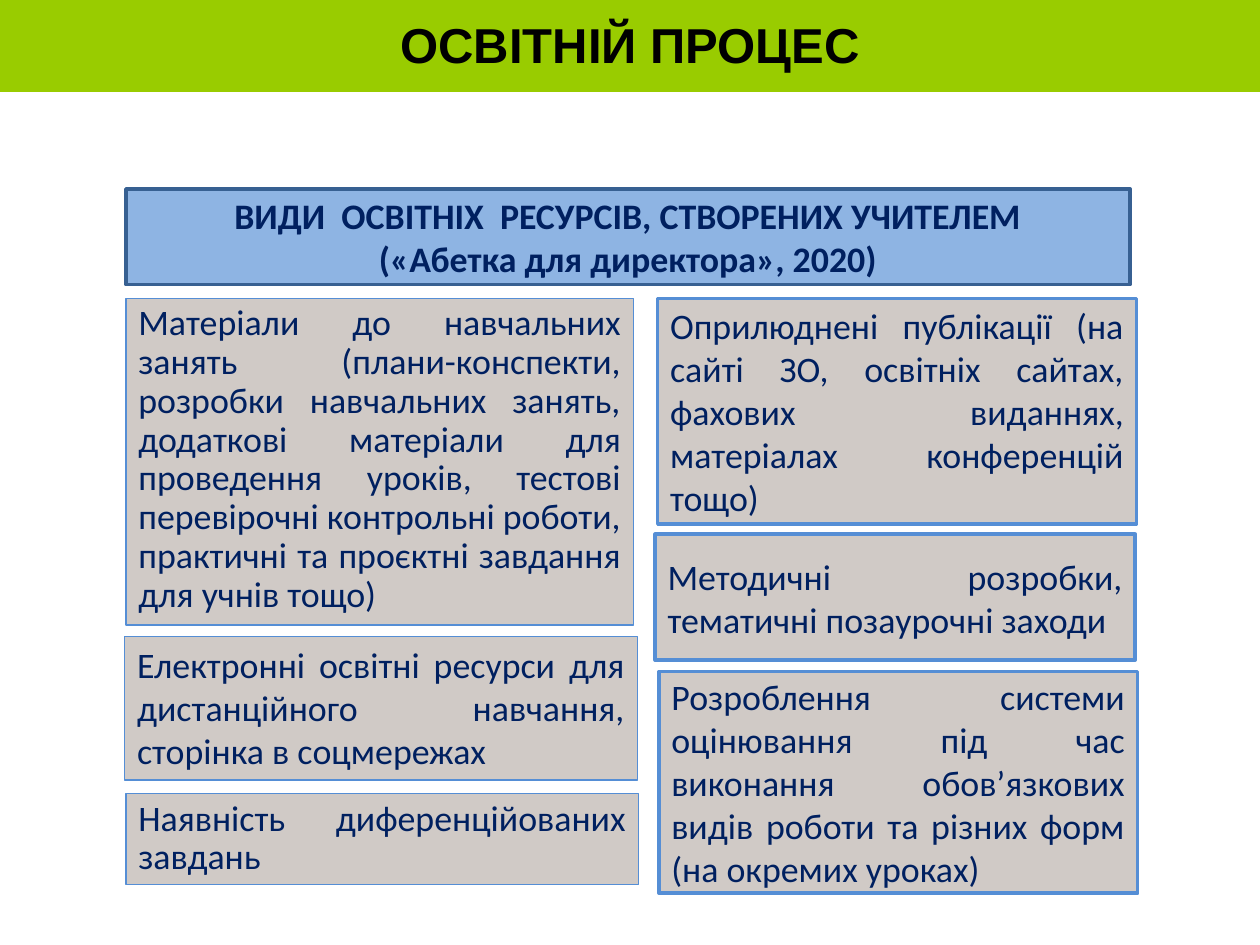
from pptx import Presentation
from pptx.dml.color import RGBColor
from pptx.enum.shapes import MSO_SHAPE
from pptx.enum.text import MSO_ANCHOR, PP_ALIGN
from pptx.util import Inches, Pt

RECTANGLE = MSO_SHAPE.RECTANGLE
TOP, MIDDLE = MSO_ANCHOR.TOP, MSO_ANCHOR.MIDDLE
CENTER, JUSTIFY = PP_ALIGN.CENTER, PP_ALIGN.JUSTIFY

BLACK = RGBColor(0x00, 0x00, 0x00)
NAVY = RGBColor(0x00, 0x20, 0x60)
LIME = RGBColor(0x99, 0xCC, 0x00)
SKY = RGBColor(0x8E, 0xB4, 0xE3)
STEEL = RGBColor(0x37, 0x60, 0x92)
BLUE = RGBColor(0x55, 0x8E, 0xD5)
STONE = RGBColor(0xD0, 0xCA, 0xC6)

COLUMNS, ROWS = 100, 75

TITLE_FONT = {"name": "Arial", "size": Pt(28), "bold": True}
BODY_FONT = {"name": "Calibri", "size": Pt(20.5), "bold": False}
HEADING_FONT = {**BODY_FONT, "bold": True}
PLAIN = {"alignment": JUSTIFY}
TIGHT = {"alignment": JUSTIFY, "line_spacing": 0.9, "space_before": Pt(8.6)}
CENTERED = {"alignment": CENTER}

# Each entry: (column, row, columns wide, rows high), paragraph format, text
LEFT_BOXES = [
    ((10, 23.7, 40.3, 25.9), TIGHT,
     "Матеріали до навчальних занять (плани-конспекти, розробки навчальних "
     "занять, додаткові матеріали для проведення уроків, тестові перевірочні "
     "контрольні роботи, практичні та проєктні завдання для учнів тощо)"),
    ((9.9, 50.5, 40.7, 11.4), PLAIN,
     "Електронні освітні ресурси для дистанційного навчання, "
     "сторінка в соцмережах"),
    ((10, 63, 40.7, 7.2), TIGHT, "Наявність диференційованих завдань"),
]
RIGHT_BOXES = [
    ((52.2, 23.7, 38, 17.9), PLAIN,
     "Оприлюднені публікації (на сайті ЗО, освітніх сайтах, фахових "
     "виданнях, матеріалах конференцій тощо)"),
    ((52, 42.4, 38.1, 10), PLAIN,
     "Методичні розробки, тематичні позаурочні заходи"),
    ((52.3, 53.3, 38, 17.6), PLAIN,
     "Розроблення системи оцінювання під час виконання обов’язкових видів "
     "роботи та різних форм (на окремих уроках)"),
]


def apply(target, values):
    for name, value in values.items():
        setattr(target, name, value)


class PageBuilder:
    """Draws styled boxes on one page, placed by grid columns and rows."""

    def __init__(self, deck):
        self.page = deck.slides.add_slide(deck.slide_layouts[6])
        self.column = deck.slide_width / COLUMNS
        self.row = deck.slide_height / ROWS

    def rectangle(self, place, fill, line=None, width=0):
        left, top, wide, high = place
        box = self.page.shapes.add_shape(
            RECTANGLE, round(left * self.column), round(top * self.row),
            round(wide * self.column), round(high * self.row))
        box.shadow.inherit = False
        box.fill.solid()
        box.fill.fore_color.rgb = fill
        if line is None:
            box.line.fill.background()
        else:
            box.line.color.rgb = line
            box.line.width = Pt(width)
        return box

    def add_text(self, box, lines, font, color, layout, anchor=MIDDLE):
        frame = box.text_frame
        apply(frame, {"word_wrap": True, "vertical_anchor": anchor})
        for index, text in enumerate(lines):
            para = frame.add_paragraph() if index else frame.paragraphs[0]
            apply(para, layout)
            span = para.add_run()
            span.text = text
            apply(span.font, font)
            span.font.color.rgb = color

    def title(self, text):
        box = self.rectangle((0, -0.4, COLUMNS, 7.7), LIME)
        self.add_text(box, [text], TITLE_FONT, BLACK, CENTERED)

    def heading(self, lines):
        box = self.rectangle((10, 15, 79.7, 7.6), SKY, STEEL, 2)
        self.add_text(box, lines, HEADING_FONT, NAVY, CENTERED)

    def resources(self, entries, line_width, anchor):
        for place, layout, text in entries:
            box = self.rectangle(place, STONE, BLUE, line_width)
            self.add_text(box, [text], BODY_FONT, NAVY, layout, anchor)


def main():
    deck = Presentation()
    deck.slide_width, deck.slide_height = Inches(10), Inches(7.5)
    builder = PageBuilder(deck)
    builder.resources(LEFT_BOXES, 0.75, TOP)
    builder.resources(RIGHT_BOXES, 2, MIDDLE)
    builder.heading(["ВИДИ  ОСВІТНІХ  РЕСУРСІВ, СТВОРЕНИХ УЧИТЕЛЕМ",
                     "(«Абетка для директора», 2020)"])
    builder.title("ОСВІТНІЙ ПРОЦЕС")
    deck.save("out.pptx")


if __name__ == "__main__":
    main()
